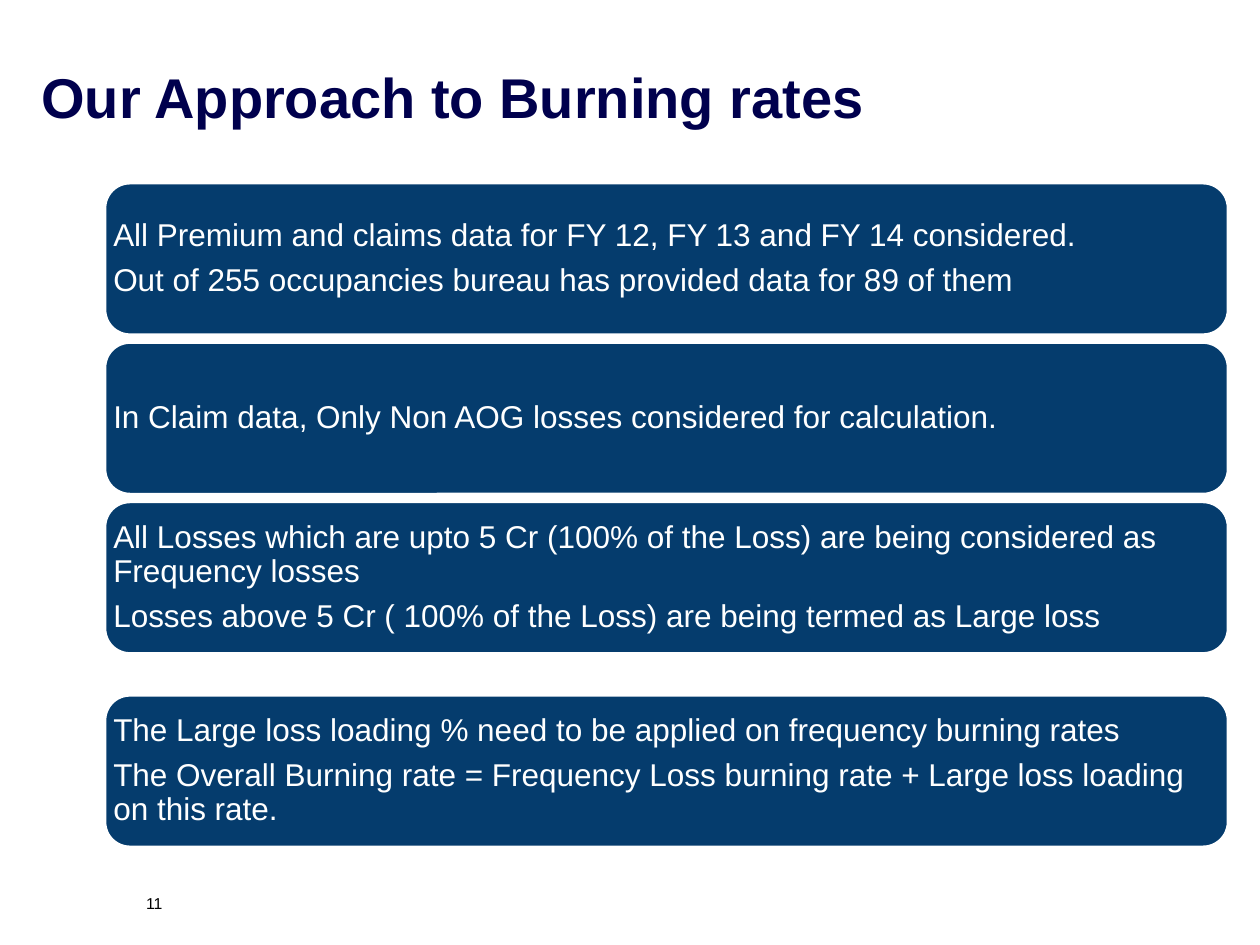
from pptx import Presentation
from pptx.dml.color import RGBColor
from pptx.enum.shapes import MSO_SHAPE
from pptx.enum.text import MSO_ANCHOR, PP_ALIGN
from pptx.util import Inches, Pt

ROUND = MSO_SHAPE.ROUNDED_RECTANGLE
MIDDLE, BOTTOM = MSO_ANCHOR.MIDDLE, MSO_ANCHOR.BOTTOM
LEFT, RIGHT = PP_ALIGN.LEFT, PP_ALIGN.RIGHT
NAVY = RGBColor(0x00, 0x00, 0x4D)
BLUE = RGBColor(0x05, 0x3C, 0x6D)
WHITE = RGBColor(0xFF, 0xFF, 0xFF)
BLACK = RGBColor(0x00, 0x00, 0x00)

TITLE = "Our Approach to Burning rates"
NUMBER = "11"
CARDS = [
    ["All Premium and claims data for FY 12, FY 13 and FY 14 considered.",
     "Out of 255 occupancies bureau has provided data for 89 of them"],
    ["In Claim data, Only Non AOG losses considered for calculation."],
    ["All Losses which are upto 5 Cr (100% of the Loss) are being considered as Frequency losses",
     "Losses above 5 Cr ( 100% of the Loss) are being termed as Large loss"],
    ["The Large loss loading % need to be applied on frequency burning rates",
     "The Overall Burning rate = Frequency Loss burning rate + Large loss loading on this rate."],
]
CARD_X, CARD_Y, CARD_W, CARD_H = 0.83, 1.45, 8.92, 1.21
STEP, LAST_GAP = 1.265, 0.27


def add_line(para, text, size, color, bold=False, align=LEFT):
    para.alignment = align
    run = para.add_run()
    run.text = text
    font = run.font
    font.name, font.size, font.bold = "Arial", Pt(size), bold
    font.color.rgb = color


def set_frame(frame, anchor, side, edge, wrap=True):
    frame.word_wrap = wrap
    frame.vertical_anchor = anchor
    frame.margin_left = frame.margin_right = Inches(side)
    frame.margin_top = frame.margin_bottom = Inches(edge)


def add_card(slide, top, lines):
    card = slide.shapes.add_shape(
        ROUND, Inches(CARD_X), Inches(top), Inches(CARD_W), Inches(CARD_H))
    card.shadow.inherit = False
    card.fill.solid()
    card.fill.fore_color.rgb = BLUE
    card.line.color.rgb = WHITE
    card.line.width = Pt(2)
    frame = card.text_frame
    set_frame(frame, MIDDLE, 0.01, 0.01)
    for i, text in enumerate(lines):
        para = frame.add_paragraph() if i else frame.paragraphs[0]
        para.line_spacing = 0.9
        para.space_after = Pt(6.3)
        add_line(para, text, 18, WHITE)


def main():
    deck = Presentation()
    deck.slide_width, deck.slide_height = Inches(10), Inches(7.5)
    slide = deck.slides.add_slide(deck.slide_layouts[6])

    page = slide.shapes.add_textbox(
        Inches(1.08), Inches(7.09), Inches(0.21), Inches(0.15)).text_frame
    set_frame(page, MSO_ANCHOR.TOP, 0, 0, wrap=False)
    add_line(page.paragraphs[0], NUMBER, 9, BLACK, align=RIGHT)

    for i, lines in enumerate(CARDS):
        gap = LAST_GAP if i == len(CARDS) - 1 else 0
        add_card(slide, CARD_Y + i * STEP + gap, lines)

    title = slide.shapes.add_textbox(
        Inches(0.23), Inches(0.33), Inches(9.38), Inches(0.75)).text_frame
    set_frame(title, BOTTOM, 0.1, 0.05)
    add_line(title.paragraphs[0], TITLE, 32, NAVY, bold=True)

    deck.save("out.pptx")


if __name__ == "__main__":
    main()
